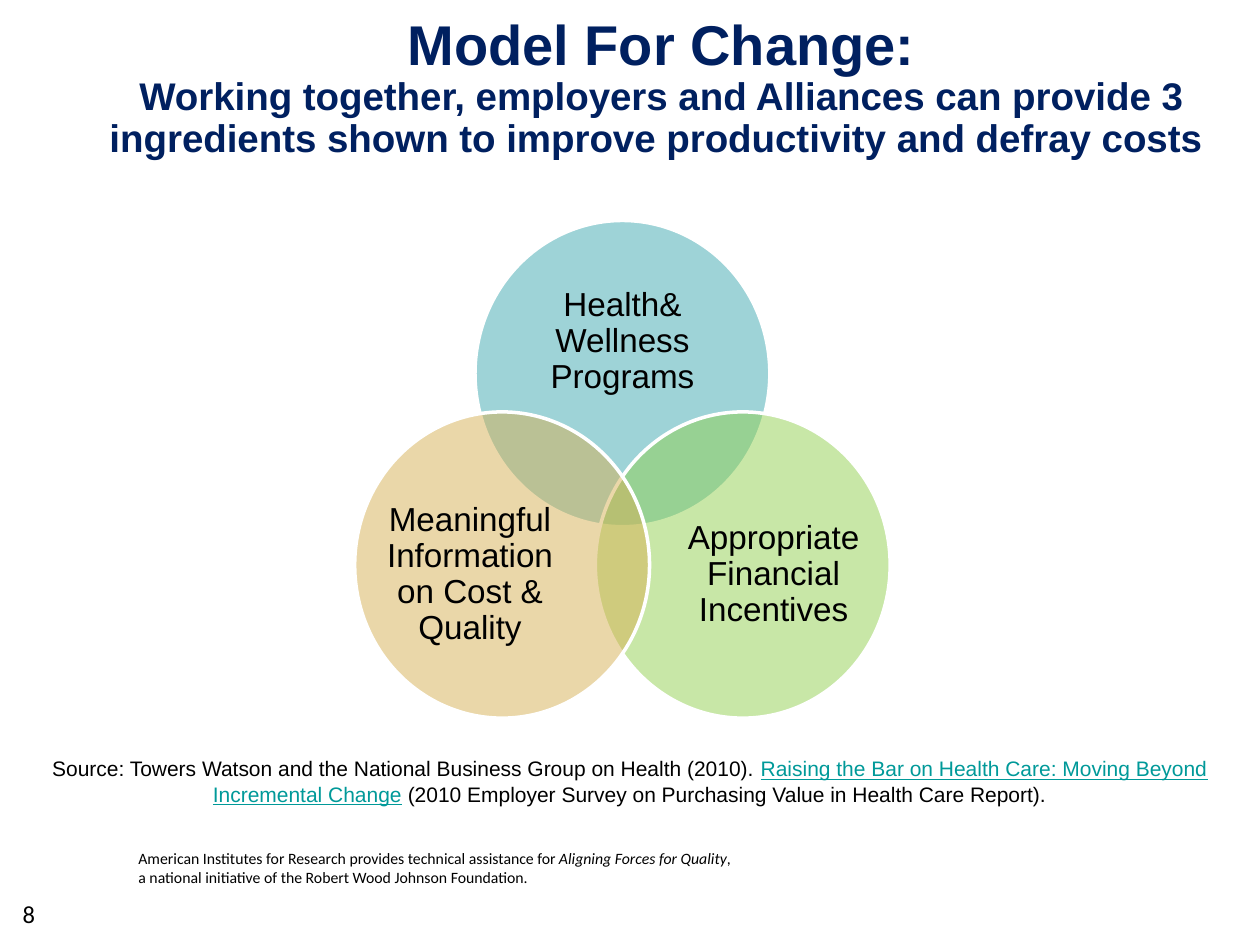
from dataclasses import dataclass

from lxml import etree
from pptx import Presentation
from pptx.dml.color import RGBColor
from pptx.enum import shapes, text
from pptx.oxml import ns
from pptx.util import Pt


@dataclass(frozen=True)
class Theme:
    head: str = "Arial"
    note: str = "Calibri"
    navy: str = "002060"
    ink: str = "000000"
    link: str = "009999"
    edge: str = "FFFFFF"
    teal: str = "9ED3D7"
    green: str = "92D050"
    sand: str = "D6B155"
    title: int = 32
    sub: int = 22
    label: int = 19
    cite: int = 12
    page: int = 14
    foot: int = 9


T = Theme()
MID = text.MSO_ANCHOR.MIDDLE
LOW = text.MSO_ANCHOR.BOTTOM
MID_X = 355.7            # centre line of the three circles
WIDE, TALL = 168.5, 175
SIDE = 68.75             # shift of the lower circles from the centre line


def place(shape, box):
    shape.left, shape.top, shape.width, shape.height = map(Pt, box)


def style(font, size, name=T.head, color=T.ink):
    font.size, font.name = Pt(size), name
    font.color.rgb = RGBColor.from_string(color)


def add_run(para, words):
    run = para.add_run()
    run.text = words
    return run


def add_break(para, size):
    para.add_line_break()
    mark = etree.SubElement(para._p[-1], ns.qn("a:rPr"))
    mark.set("sz", str(size * 100))


def add_text(slide, box, anchor, center=True, inset=None):
    """Add a wrapping text box and return its first paragraph."""
    shape = slide.shapes.add_textbox(*map(Pt, box))
    frame = shape.text_frame
    frame.word_wrap = True
    frame.vertical_anchor = anchor
    if inset is not None:
        frame.margin_left = frame.margin_right = Pt(inset)
        frame.margin_top = frame.margin_bottom = Pt(inset)
    para = frame.paragraphs[0]
    para.alignment = text.PP_ALIGN.CENTER if center else text.PP_ALIGN.LEFT
    return para


def add_circle(slide, shift, top, color, alpha=None):
    left = MID_X + shift - WIDE / 2
    shape = slide.shapes.add_shape(
        shapes.MSO_SHAPE.OVAL, *map(Pt, (left, top, WIDE, TALL)))
    shape.shadow.inherit = False
    shape.fill.solid()
    shape.fill.fore_color.rgb = RGBColor.from_string(color)
    shape.line.color.rgb = RGBColor.from_string(T.edge)
    shape.line.width = Pt(2)
    if alpha:
        tint = shape._element.spPr.find(ns.qn("a:solidFill"))[0]
        etree.SubElement(tint, ns.qn("a:alpha")).set("val", str(alpha * 1000))


def add_label(slide, box, words):
    para = add_text(slide, box, MID, inset=0)
    para.line_spacing = 0.9
    add_run(para, words)
    style(para.font, T.label)


def add_title(slide):
    shape = slide.shapes.title
    place(shape, (36, 5.8, 684, 90))
    frame = shape.text_frame
    frame.word_wrap = True
    frame.auto_size = text.MSO_AUTO_SIZE.NONE
    frame.vertical_anchor = MID
    para = frame.paragraphs[0]
    para.alignment = text.PP_ALIGN.CENTER
    para.line_spacing = 0.9
    head = add_run(para, "Model For Change:")
    add_break(para, T.title)
    sub = add_run(para, "Working together, employers and Alliances can provide 3 "
                        "ingredients shown to improve productivity and defray costs ")
    for run, size in ((head, T.title), (sub, T.sub)):
        style(run.font, size, color=T.navy)
        run.font.bold = True


def add_venn(slide):
    low = 235.4
    parts = (
        (0, 126, T.teal, None, (293.8, 156.2, 123.8, 78.5),
         "Health& Wellness Programs"),
        (SIDE, low, T.green, 50, (391.7, 280, 100.8, 96.5),
         "Appropriate Financial Incentives"),
        (-SIDE, low, T.sand, 50, (218.2, 280, 100.8, 96.5),
         "Meaningful Information on Cost & Quality"),
    )
    for shift, top, color, alpha, box, words in parts:
        add_circle(slide, shift, top, color, alpha)
        add_label(slide, box, words)


def add_source(slide):
    para = add_text(slide, (18, 428.4, 684, 36), MID)
    add_run(para, "Source: Towers Watson and the National Business Group "
                  "on Health (2010). ")
    work = add_run(para, "Raising the Bar on Health Care: Moving Beyond "
                         "Incremental Change")
    add_run(para, " (2010 Employer Survey on Purchasing Value in Health Care Report).")
    style(para.font, T.cite)
    work.font.color.rgb = RGBColor.from_string(T.link)
    work.font.underline = True


def add_foot(slide):
    para = add_text(slide, (72, 481.7, 384, 28.8), LOW, center=False)
    add_run(para, "American Institutes for Research provides technical assistance for ")
    add_run(para, "Aligning Forces for Quality").font.italic = True
    add_run(para, ", ")
    add_break(para, T.foot)
    add_run(para, "a national initiative of the Robert Wood Johnson Foundation.")
    style(para.font, T.foot, T.note)


def add_page(slide):
    para = add_text(slide, (5.8, 498.2, 41.8, 36), LOW, center=False)
    add_run(para, "8")
    style(para.font, T.page, T.note)


def main():
    deck = Presentation()
    deck.slide_width, deck.slide_height = Pt(720), Pt(540)
    slide = deck.slides.add_slide(deck.slide_layouts[5])
    # Heading
    add_title(slide)
    # Three overlapping ingredients
    add_venn(slide)
    # Source, credit and page number
    add_source(slide)
    add_foot(slide)
    add_page(slide)
    deck.save("out.pptx")


if __name__ == "__main__":
    main()
